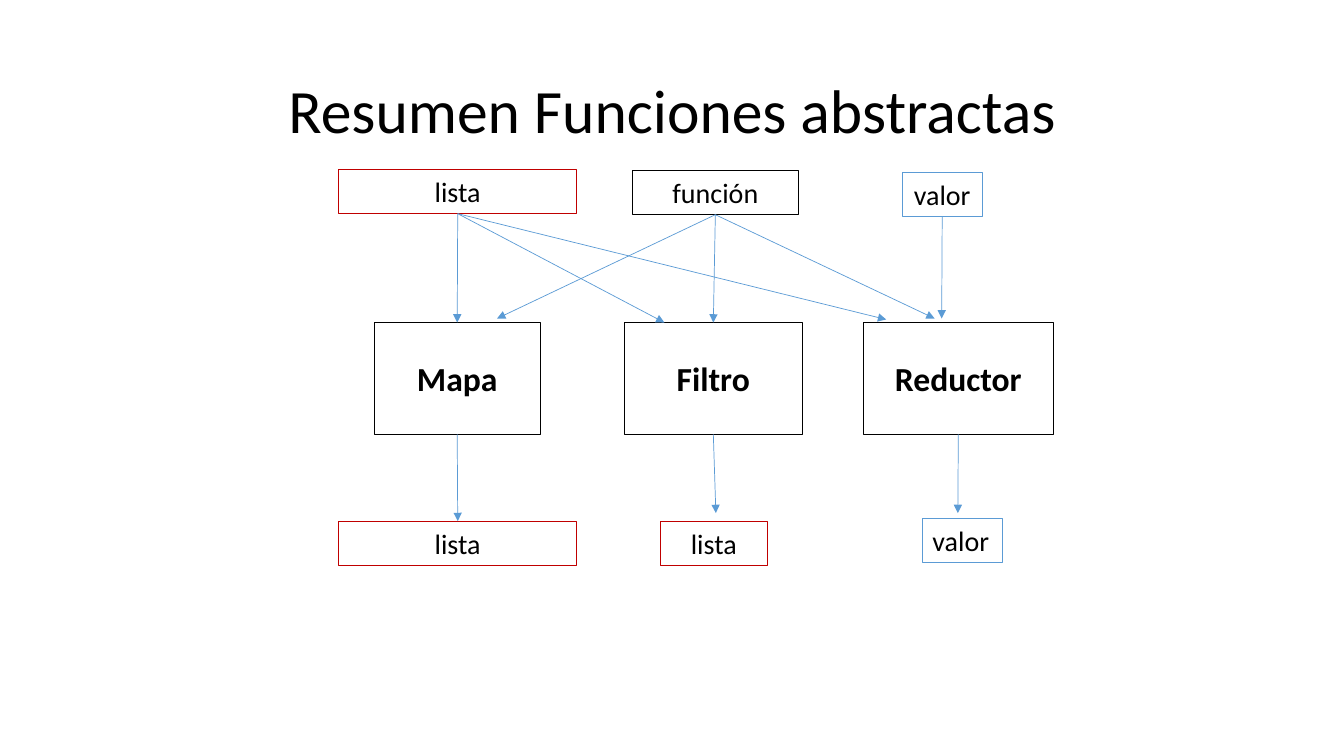
"""Build the slide that sums up the abstract functions map, filter and reduce."""
import pptx
import pptx.dml.color
import pptx.enum.shapes
import pptx.enum.text
import pptx.oxml
import pptx.oxml.ns
import pptx.util

Inches = pptx.util.Inches
ALIGN = pptx.enum.text.PP_ALIGN
BLACK, RED, BLUE = "000000", "C00000", "5B9BD5"
TOP, BOTTOM = 0, 2


def color(value):
    return pptx.dml.color.RGBColor.from_string(value)


def write(shape, text, size, bold=False, alignment=ALIGN.CENTER):
    frame = shape.text_frame
    frame.text = text
    frame.word_wrap = True
    frame.vertical_anchor = pptx.enum.text.MSO_ANCHOR.MIDDLE
    paragraph = frame.paragraphs[0]
    paragraph.alignment = alignment
    font = paragraph.runs[0].font
    font_format = {"name": "Calibri", "size": pptx.util.Pt(size), "bold": bold}
    for name, value in font_format.items():
        setattr(font, name, value)
    font.color.rgb = color(BLACK)


presentation = pptx.Presentation()
presentation.slide_width = Inches(13.33)
presentation.slide_height = Inches(7.5)
slide = presentation.slides.add_slide(presentation.slide_layouts[5])

title = slide.shapes.title
title_format = {"left": 0.92, "top": 0.4, "width": 11.5, "height": 1.45}
for name, value in title_format.items():
    setattr(title, name, Inches(value))
write(title, "Resumen Funciones abstractas", 44)
title.text_frame.paragraphs[0].line_spacing = 0.9

FUNCTION = {"size": 24, "bold": True}
DATA = {"size": 20}
boxes = {
    "map": ("Mapa", 3.71, 3.2, 1.65, 1.11, BLACK, FUNCTION),
    "filter": ("Filtro", 6.19, 3.2, 1.77, 1.11, BLACK, FUNCTION),
    "reduce": ("Reductor", 8.56, 3.2, 1.89, 1.11, BLACK, FUNCTION),
    "list in": ("lista", 3.36, 1.68, 2.36, 0.44, RED, DATA),
    "function in": ("función", 6.27, 1.69, 1.65, 0.44, BLACK, DATA),
    "value in": ("valor", 8.95, 1.71, 0.79, 0.44, BLUE, DATA),
    "map out": ("lista", 3.36, 5.17, 2.36, 0.44, RED, DATA),
    "filter out": ("lista", 6.55, 5.17, 1.06, 0.44, RED, DATA),
    "reduce out": ("valor", 9.15, 5.14, 0.79, 0.44, BLUE,
                   {"size": 20, "alignment": ALIGN.LEFT}),
}
shapes = {}
for key, (text, left, top, width, height, line_color, text_format) in boxes.items():
    shape = slide.shapes.add_shape(
        pptx.enum.shapes.MSO_SHAPE.RECTANGLE,
        Inches(left), Inches(top), Inches(width), Inches(height))
    shape.shadow.inherit = False
    shape.fill.background()
    shape.line.color.rgb = color(line_color)
    shape.line.width = pptx.util.Pt(0.75)
    write(shape, text, **text_format)
    shapes[key] = shape

arrows = [
    ("list in", "map"),
    ("map", "map out"),
    ("function in", "filter"),
    ("filter", (7.1, 5.09)),
    ("reduce", (9.5, 5.09)),
    ("list in", (6.59, 3.2)),
    ("list in", (8.79, 3.17)),
    ("function in", (4.93, 3.16)),
    ("function in", (9.27, 3.16)),
    ("value in", (9.34, 3.16)),
]
for start, end in arrows:
    end_x, end_y = (0, 0) if end in shapes else end
    connector = slide.shapes.add_connector(
        pptx.enum.shapes.MSO_CONNECTOR.STRAIGHT,
        0, 0, Inches(end_x), Inches(end_y))
    connector.begin_connect(shapes[start], BOTTOM)
    if end in shapes:
        connector.end_connect(shapes[end], TOP)
    connector.line.color.rgb = color(BLUE)
    connector.line.width = pptx.util.Pt(0.5)
    line = connector.line._get_or_add_ln()
    tail = pptx.oxml.parse_xml(
        f'<a:tailEnd {pptx.oxml.ns.nsdecls("a")} type="triangle"/>')
    line.append(tail)
    effects = pptx.oxml.parse_xml(f'<a:effectLst {pptx.oxml.ns.nsdecls("a")}/>')
    line.addnext(effects)

presentation.save("out.pptx")
